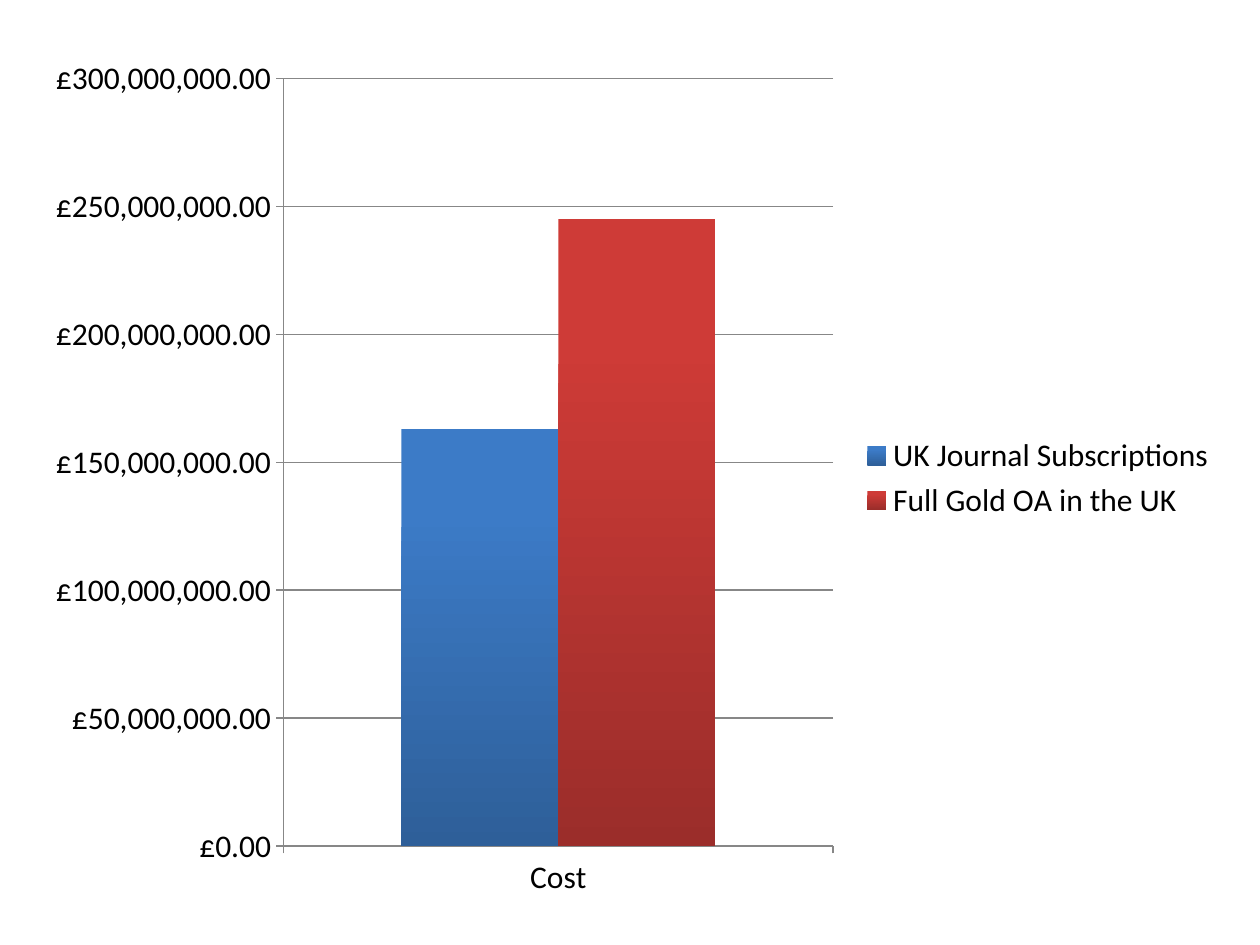
from pptx import Presentation
from pptx.chart.data import CategoryChartData
from pptx.dml.color import RGBColor
from pptx.enum.chart import XL_CHART_TYPE as ChartType, XL_LEGEND_POSITION as LegendPos, XL_TICK_MARK as Tick
from pptx.util import Emu, Pt

EMU_PER_PX = 914400 / 126


def px(n):
    return Emu(round(n * EMU_PER_PX))


def rgb(value):
    return RGBColor.from_string(value)


class Deck:
    """Holds the chart style and the current slide."""

    font, size, text, rule = "Calibri", 18, "000000", "878787"

    def __init__(self, width, height):
        self.prs = Presentation()
        self.prs.slide_width, self.prs.slide_height = px(width), px(height)
        self.s = self.prs.slides.add_slide(self.prs.slide_layouts[6])

    def gradient(self, fill, colors):
        fill.gradient()
        fill.gradient_angle = 270
        for stop, color, position in zip(fill.gradient_stops, colors, (0.2, 1)):
            stop.color.rgb = rgb(color)
            stop.position = position

    def line(self, fmt):
        fmt.line.color.rgb = rgb(self.rule)
        fmt.line.width = Pt(0.75)

    def axis(self, axis):
        axis.major_tick_mark, axis.minor_tick_mark = Tick.OUTSIDE, Tick.NONE
        self.line(axis.format)

    def columns(self, x, y, w, h, categories, series, number_format, top, step):
        data = CategoryChartData(number_format=number_format)
        data.categories = categories
        for name, values, _ in series:
            data.add_series(name, values)
        chart = self.s.shapes.add_chart(
            ChartType.COLUMN_CLUSTERED, px(x), px(y), px(w), px(h), data).chart
        chart.has_title = False
        chart.font.name, chart.font.size = self.font, Pt(self.size)
        chart.font.color.rgb = rgb(self.text)

        chart.has_legend = True
        chart.legend.position = LegendPos.RIGHT
        chart.legend.include_in_layout = False

        self.axis(chart.category_axis)
        values = chart.value_axis
        self.axis(values)
        values.minimum_scale, values.maximum_scale, values.major_unit = 0, top, step
        values.has_major_gridlines = True
        self.line(values.major_gridlines.format)
        values.tick_labels.number_format = number_format
        values.tick_labels.number_format_is_linked = False

        plot = chart.plots[0]
        plot.vary_by_categories = False
        plot.gap_width, plot.overlap = 150, 0
        for ser, (_, _, colors) in zip(plot.series, series):
            ser.invert_if_negative = False
            self.gradient(ser.format.fill, colors)


def main():
    deck = Deck(1260, 945)
    deck.columns(
        32, 42, 1197, 872,
        ["Cost"],
        [("UK Journal Subscriptions", [163000000], ("3C7BC7", "2E5F99")),
         ("Full Gold OA in the UK", [245000000], ("CE3B37", "9B2D2A"))],
        "[$£-809]#,##0.00", 300000000, 50000000)
    deck.prs.save("out.pptx")


if __name__ == "__main__":
    main()
